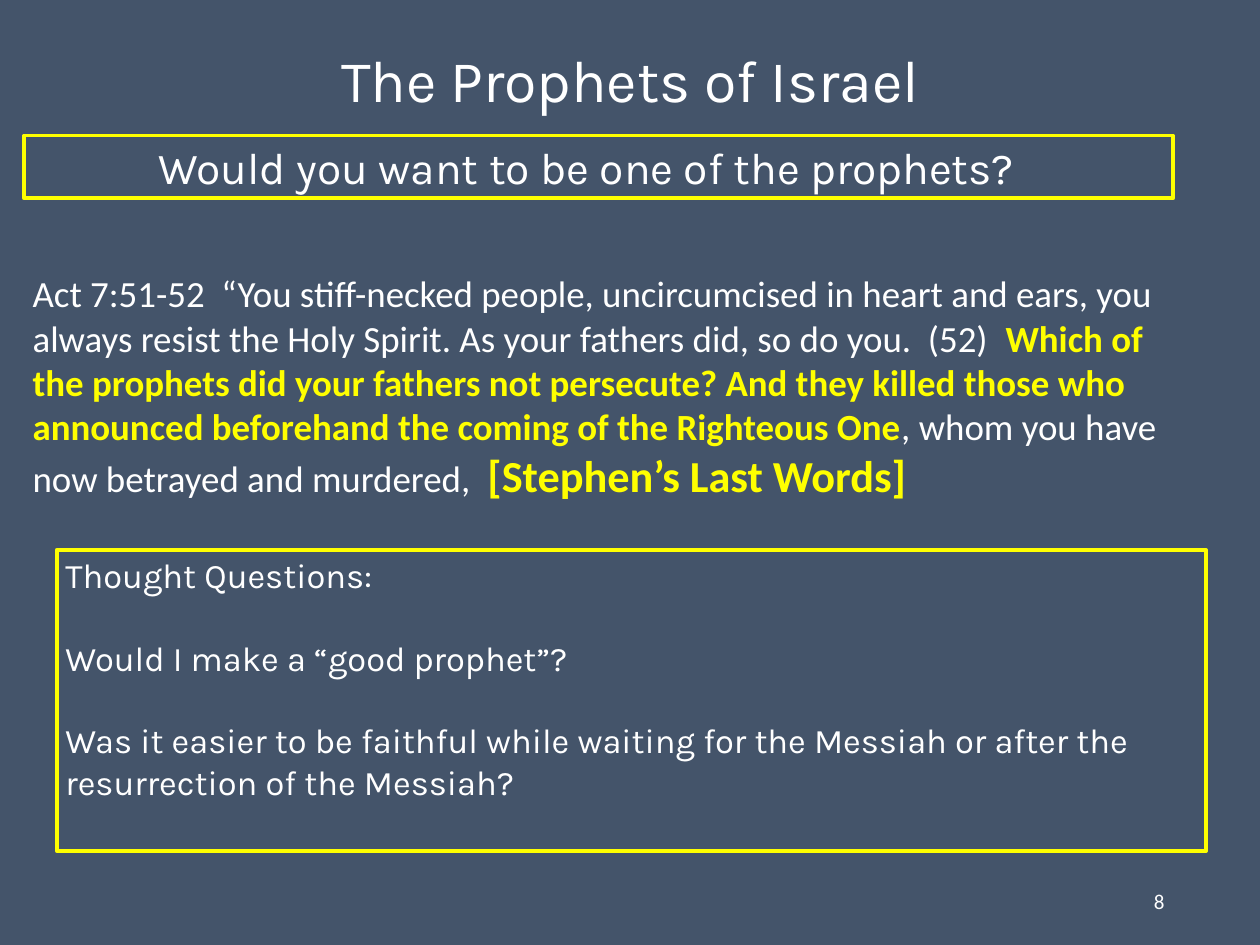
from pptx import Presentation
from pptx.dml.color import RGBColor
from pptx.enum.text import MSO_ANCHOR, PP_ALIGN
from pptx.util import Inches, Pt

LEFT, CENTER, RIGHT = PP_ALIGN.LEFT, PP_ALIGN.CENTER, PP_ALIGN.RIGHT
TOP, MIDDLE = MSO_ANCHOR.TOP, MSO_ANCHOR.MIDDLE
SLATE = RGBColor(0x44, 0x54, 0x6A)
WHITE = RGBColor(0xFF, 0xFF, 0xFF)
YELLOW = RGBColor(0xFF, 0xFF, 0x00)

deck = Presentation()
deck.slide_width = Inches(14.22)
deck.slide_height = Inches(10.67)
slide = deck.slides.add_slide(deck.slide_layouts[6])
slide.background.fill.solid()
slide.background.fill.fore_color.rgb = SLATE


def add_box(place, anchor=TOP, framed=False):
    box = slide.shapes.add_textbox(*map(Inches, place))
    if framed:
        box.line.color.rgb = YELLOW
        box.line.width = Pt(3)
    frame = box.text_frame
    frame.word_wrap = True
    frame.vertical_anchor = anchor
    return frame


def style(para, size, font, align=LEFT):
    para.alignment = align
    para.font.size = Pt(size)
    para.font.name = font
    para.font.color.rgb = WHITE


title = add_box((0.98, 0.36, 12.27, 1.17), MIDDLE).paragraphs[0]
title.text = "The Prophets of Israel"
title.line_spacing = 0.9
style(title, 48, "Karla", CENTER)

banner = add_box((0.27, 1.53, 12.97, 0.71), framed=True)
banner.margin_right = Inches(0.37)
banner.paragraphs[0].text = "Would you want to be one of the prophets?"
style(banner.paragraphs[0], 36, "Karla", CENTER)

verse = add_box((0.27, 3.01, 13.1, 2.73)).paragraphs[0]
style(verse, 30, "Calibri")
parts = [
    ("Act 7:51-52  “You stiff-necked people, uncircumcised in heart and ears, "
     "you always resist the Holy Spirit. As your fathers did, so do you.  (52)  ", 30, False),
    ("Which of the prophets did your fathers not persecute? And they killed those "
     "who announced beforehand the coming of the Righteous One", 30, True),
    (", whom you have now betrayed and murdered,  ", 30, False),
    ("[Stephen’s Last Words]", 36, True),
]
for text, size, strong in parts:
    run = verse.add_run()
    run.text = text
    run.font.name = "Calibri"
    run.font.size = Pt(size)
    run.font.bold = strong
    run.font.color.rgb = YELLOW if strong else WHITE

frame = add_box((0.64, 6.21, 12.97, 3.4), framed=True)
lines = [
    "Thought Questions:",
    "Would I make a “good prophet”?",
    "Was it easier to be faithful while waiting for the Messiah "
    "or after the resurrection of the Messiah?",
]
for i, line in enumerate(lines):
    para = frame.add_paragraph() if i else frame.paragraphs[0]
    para.text = line
    if i:
        para.space_before = Pt(33.5)
    style(para, 28, "Karla")

number = add_box((10.04, 9.89, 3.2, 0.57), MIDDLE).paragraphs[0]
number.text = "8"
style(number, 17.1, "Calibri", RIGHT)

deck.save("out.pptx")
